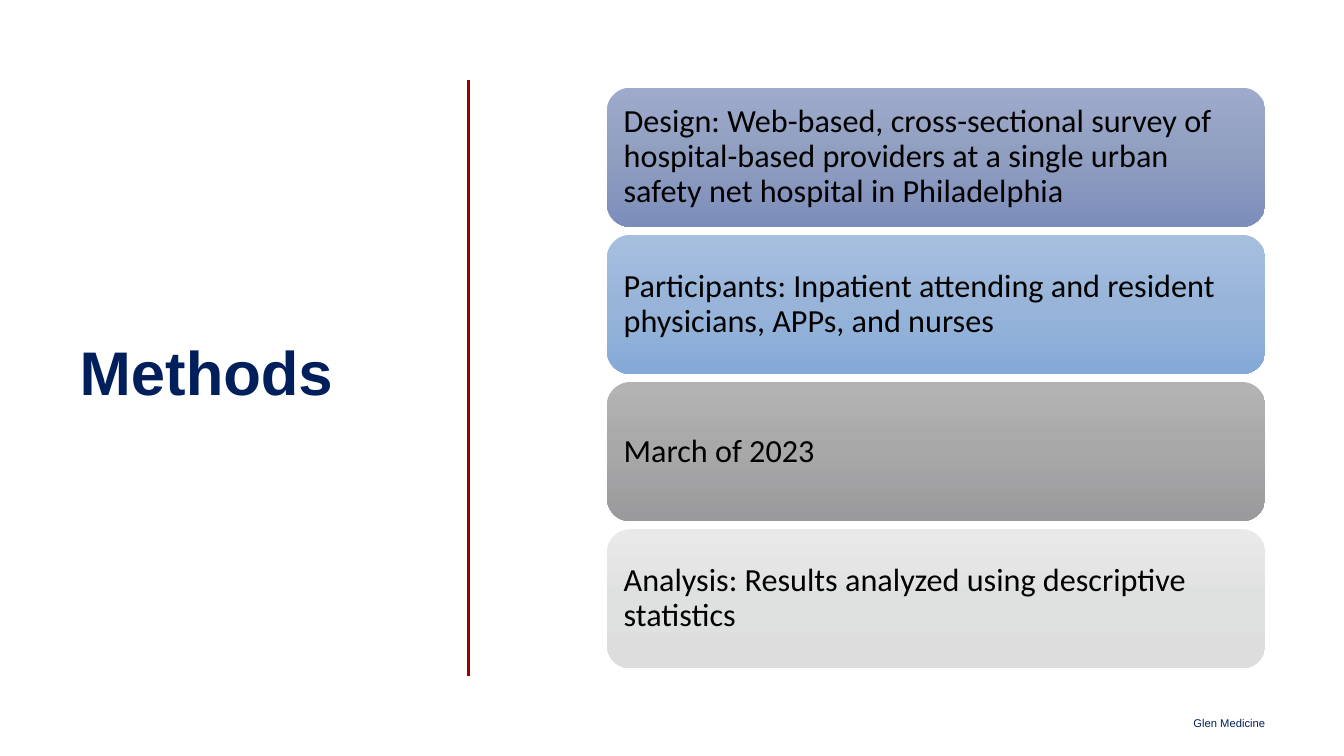
from copy import deepcopy

from pptx import Presentation
from pptx.dml.color import RGBColor
from pptx.enum.shapes import MSO_CONNECTOR, MSO_SHAPE
from pptx.enum.text import MSO_ANCHOR, MSO_AUTO_SIZE, PP_ALIGN
from pptx.oxml.ns import qn
from pptx.util import Inches, Pt

NAVY = "011F5B"
RED = "990000"
MARGIN = 0.79
BODY_HEIGHT = 5.92
RIGHT_EDGE = 12.55
STEP_GAP = 0.08

STEPS = [
    ("Design: Web-based, cross-sectional survey of hospital-based providers "
     "at a single urban safety net hospital in Philadelphia",
     ("9DAACB", "909EC0", "7C8DBA")),
    ("Participants: Inpatient attending and resident physicians, APPs, and nurses",
     ("A6BFDF", "98B5D9", "85AAD7")),
    ("March of 2023", ("B3B3B4", "A8A8A9", "9A9A9C")),
    ("Analysis: Results analyzed using descriptive statistics",
     ("E9E9E9", "DFE1E0", "DCDDDC")),
]


def color(hex_string):
    return RGBColor.from_string(hex_string)


def inches(*lengths):
    return [Inches(length) for length in lengths]


def apply(target, formats):
    for name, value in formats.items():
        setattr(target, name, value)


def write(shape, wording, font, ink, paragraph, anchor, inset=0):
    frame = shape.text_frame
    frame.text = wording
    apply(frame, {"word_wrap": True, "auto_size": MSO_AUTO_SIZE.NONE,
                  "vertical_anchor": anchor})
    apply(frame, {f"margin_{side}": Inches(inset)
                  for side in ("left", "top", "right", "bottom")})
    line = frame.paragraphs[0]
    apply(line, paragraph)
    apply(line.runs[0].font, font)
    line.runs[0].font.color.rgb = color(ink)


def fill_downward(shape, hexes):
    """Fill with evenly spaced gradient stops from top to bottom."""
    shape.fill.gradient()
    shape.fill.gradient_angle = 270
    stop_list = shape._element.spPr.find(qn("a:gradFill")).find(qn("a:gsLst"))
    while len(stop_list) < len(hexes):
        stop_list.append(deepcopy(stop_list[0]))
    for index, (stop, tone) in enumerate(zip(shape.fill.gradient_stops, hexes)):
        stop.position = index / (len(hexes) - 1)
        stop.color.rgb = color(tone)


def place_title(slide, left, top, width, height):
    title = slide.shapes.title
    apply(title, dict(zip(("left", "top", "width", "height"),
                          inches(left, top, width, height))))
    write(title, "Methods", {"name": "Arial", "size": Pt(44), "bold": True}, NAVY,
          {"line_spacing": 0.8, "alignment": PP_ALIGN.LEFT}, MSO_ANCHOR.MIDDLE)


def draw_divider(slide, x, top, height):
    divider = slide.shapes.add_connector(
        MSO_CONNECTOR.STRAIGHT, *inches(x, top, x, top + height))
    divider.line.color.rgb = color(RED)
    divider.line.width = Pt(2)
    properties = divider._element.spPr
    properties.append(properties.makeelement(qn("a:effectLst"), {}))


def stack_steps(slide, left, top, width, height):
    step_height = (height - STEP_GAP * (len(STEPS) - 1)) / len(STEPS)
    for row, (wording, tones) in enumerate(STEPS):
        step = slide.shapes.add_shape(
            MSO_SHAPE.ROUNDED_RECTANGLE,
            *inches(left, top + row * (step_height + STEP_GAP), width, step_height))
        step.shadow.inherit = False
        step.line.fill.background()
        fill_downward(step, tones)
        write(step, wording, {"name": "Calibri", "size": Pt(23)}, "000000",
              {"line_spacing": 0.9, "alignment": PP_ALIGN.LEFT},
              MSO_ANCHOR.MIDDLE, inset=0.1)


def place_footer(slide, left, top, width, height):
    footer = slide.shapes.add_textbox(*inches(left, top, width, height))
    write(footer, "Glen Medicine", {"name": "Arial", "size": Pt(8)}, NAVY,
          {"alignment": PP_ALIGN.RIGHT}, MSO_ANCHOR.BOTTOM)


def main():
    deck = Presentation()
    deck.slide_width, deck.slide_height = inches(13.33, 7.5)
    slide = deck.slides.add_slide(deck.slide_layouts[5])
    place_title(slide, MARGIN, MARGIN, 3.66, BODY_HEIGHT)
    draw_divider(slide, 4.65, MARGIN, BODY_HEIGHT)
    steps_left = 6.02
    stack_steps(slide, steps_left, MARGIN + STEP_GAP, RIGHT_EDGE - steps_left,
                BODY_HEIGHT - 2 * STEP_GAP)
    footer_width = 2.64
    place_footer(slide, RIGHT_EDGE - footer_width, 7.04, footer_width, 0.2)
    deck.save("out.pptx")


if __name__ == "__main__":
    main()
